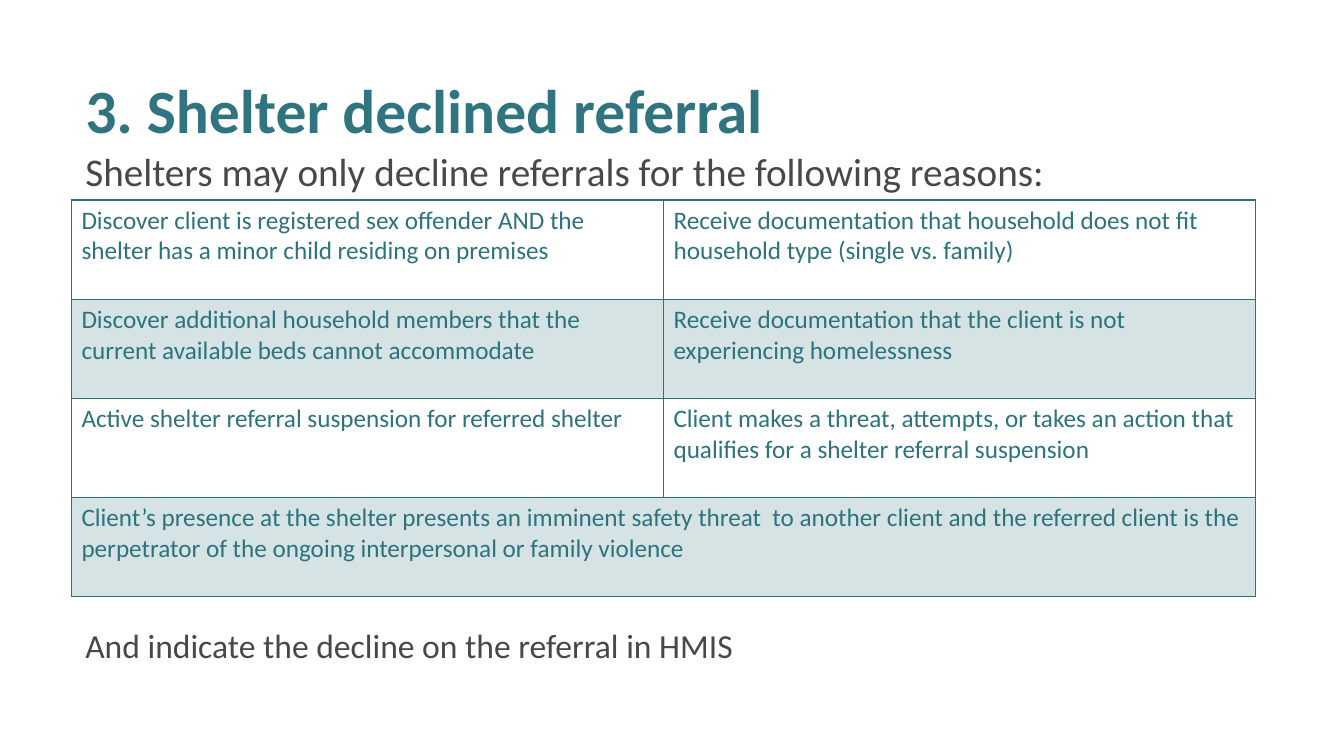
import pptx
import pptx.dml.color
import pptx.enum.text
import pptx.oxml
import pptx.oxml.ns
import pptx.util
from lxml import etree

Cm, Pt = pptx.util.Cm, pptx.util.Pt
RGB = pptx.dml.color.RGBColor
ANCHOR = pptx.enum.text.MSO_ANCHOR

TEAL = RGB(0x2F, 0x74, 0x7E)
GRID = RGB(0x2D, 0x73, 0x7E)
GREY = RGB(0x48, 0x48, 0x48)
WHITE = RGB(0xFF, 0xFF, 0xFF)

REASONS = [
    ("Discover client is registered sex offender AND the shelter has a minor "
     "child residing on premises",
     "Receive documentation that household does not fit household type "
     "(single vs. family)"),
    ("Discover additional household members that the current available beds "
     "cannot accommodate",
     "Receive documentation that the client is not experiencing homelessness"),
    ("Active shelter referral suspension for referred shelter",
     "Client makes a threat, attempts, or takes an action that qualifies for "
     "a shelter referral suspension"),
    ("Client’s presence at the shelter presents an imminent safety threat  to "
     "another client and the referred client is the perpetrator of the "
     "ongoing interpersonal or family violence",),
]


class Page:
    font = "Calibri"

    def __init__(self, deck):
        self.slide = deck.slides.add_slide(deck.slide_layouts[6])
        fill = self.slide.background.fill
        fill.solid()
        fill.fore_color.rgb = WHITE

    def style(self, para, size, color, bold=False):
        para.font.name = self.font
        para.font.size = Pt(size)
        para.font.color.rgb = color
        para.font.bold = bold

    def text(self, words, box, size, color, bold=False, anchor=ANCHOR.TOP):
        frame = self.slide.shapes.add_textbox(*map(Cm, box)).text_frame
        frame.word_wrap = True
        frame.vertical_anchor = anchor
        frame.text = words
        self.style(frame.paragraphs[0], size, color, bold)
        return frame.paragraphs[0]

    def edge(self, cell):
        """Draw a thin line on all four sides of a cell."""
        props = cell._tc.get_or_add_tcPr()
        for side in ("lnL", "lnR", "lnT", "lnB"):
            props.append(pptx.oxml.parse_xml(
                f'<a:{side} {pptx.oxml.ns.nsdecls("a")} w="{Pt(1)}">'
                f'<a:solidFill><a:srgbClr val="{GRID}"/></a:solidFill>'
                f'</a:{side}>'))

    def shade(self, cell, tint):
        """Fill a cell with the grid colour at 20 percent, or with nothing."""
        if not tint:
            cell.fill.background()
            return
        cell.fill.solid()
        cell.fill.fore_color.rgb = GRID
        props = cell._tc.tcPr
        color = props.find("a:solidFill/a:srgbClr", pptx.oxml.ns._nsmap)
        tag = pptx.oxml.ns.qn("a:alpha")
        etree.SubElement(color, tag).set("val", "20000")

    def table(self, rows, box):
        cols = max(map(len, rows))
        grid = self.slide.shapes.add_table(
            len(rows), cols, *map(Cm, box)).table
        grid.first_row = grid.horz_banding = False
        for r, row in enumerate(rows):
            if len(row) < cols:
                grid.cell(r, 0).merge(grid.cell(r, cols - 1))
            for c in range(cols):
                cell = grid.cell(r, c)
                self.edge(cell)
                self.shade(cell, r % 2 == 1)
                if c < len(row):
                    cell.text = row[c]
                    self.style(cell.text_frame.paragraphs[0], 18, GRID)


def main():
    deck = pptx.Presentation()
    deck.slide_width, deck.slide_height = Cm(33.87), Cm(19.05)
    page = Page(deck)
    title = page.text("3. Shelter declined referral", (1.9, 1.02, 29.62, 3.68),
                      44, TEAL, True, ANCHOR.MIDDLE)
    title.line_spacing = 0.9
    page.table(REASONS, (1.8, 5.04, 29.84, 10))
    page.text("Shelters may only decline referrals for the following reasons:",
              (1.9, 3.58, 29.41, 1.45), 28, GREY)
    page.text("And indicate the decline on the referral in HMIS",
              (1.9, 15.62, 28.88, 1.27), 24, GREY)
    deck.save("out.pptx")


if __name__ == "__main__":
    main()
